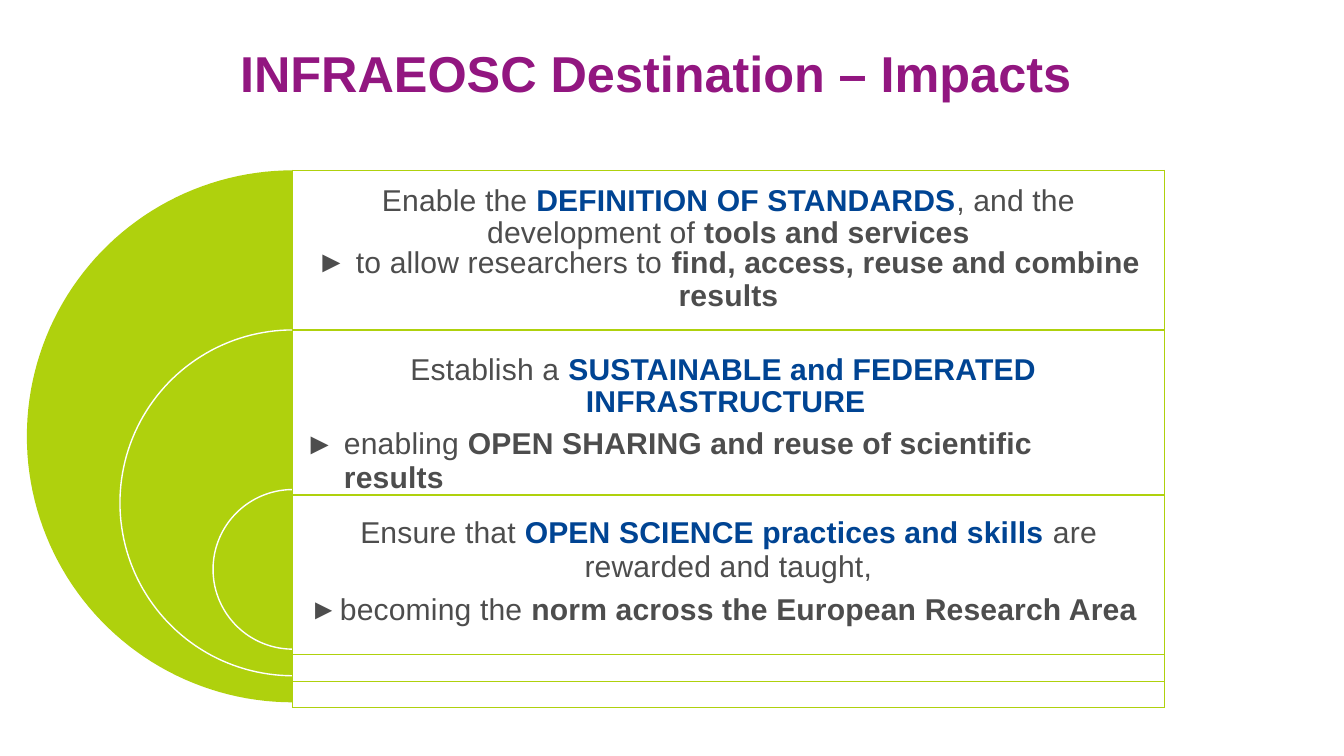
import math
from dataclasses import dataclass
from itertools import accumulate

from lxml import etree
from pptx import Presentation
from pptx.dml.color import RGBColor
from pptx.enum import text
from pptx.oxml import ns
from pptx.util import Pt


@dataclass(frozen=True)
class Theme:
    font: str = "Arial"
    title: str = "921680"
    green: str = "AFD10D"
    white: str = "FFFFFF"
    grey: str = "4D4D4D"
    blue: str = "004493"
    title_size: float = 36
    body_size: float = 21.5
    empty_size: float = 10
    body_tracking: float = 0.15
    line: float = 1


T = Theme()
CENTER, LEFT = text.PP_ALIGN.CENTER, text.PP_ALIGN.LEFT
STYLES = {
    "plain": (T.grey, False),
    "bold": (T.grey, True),
    "key": (T.blue, True),
}
NO_INDENTS = {"marL": 0, "marR": 0, "indent": 0}
ROW_HEIGHTS = [114, 114, 114, 19, 19]
IMPACTS = [
    (11.5, [
        ({"alignment": CENTER, "line_spacing": Pt(22.5)}, {"marL": 60, "marR": 60}, None,
         [("Enable the ", "plain"), ("DEFINITION OF STANDARDS", "key"),
          (", and the development of ", "plain"), ("tools and services", "bold")]),
        ({"alignment": CENTER, "line_spacing": Pt(21.4)}, {"marL": 28, "indent": -28}, 100,
         [("to allow researchers to ", "plain"),
          ("find, access, reuse and combine", "bold")]),
        ({"alignment": CENTER, "line_spacing": Pt(24.1)}, {}, None, [("results", "bold")]),
    ]),
    (18.2, [
        ({"alignment": LEFT, "line_spacing": Pt(22.5)}, {"marL": 209.5, "indent": -125.3}, None,
         [("Establish a ", "plain"),
          ("SUSTAINABLE and FEDERATED INFRASTRUCTURE", "key")]),
        ({"alignment": LEFT, "line_spacing": Pt(24.2), "space_before": Pt(6.3)},
         {"marL": 36.7, "marR": 40, "indent": -28}, 100,
         [("enabling ", "plain"),
          ("OPEN SHARING and reuse of scientific results", "bold")]),
    ]),
    (15.1, [
        ({"alignment": CENTER, "line_spacing": Pt(24.2)}, {}, None,
         [("Ensure that ", "plain"), ("OPEN SCIENCE practices and skills ", "key"),
          ("are", "plain")]),
        ({"alignment": CENTER, "line_spacing": Pt(24.2)}, {}, None,
         [("rewarded and taught,", "plain")]),
        ({"alignment": LEFT, "space_before": Pt(6.5)}, {"marL": 33.8, "indent": -21.6}, 95,
         [("becoming the ", "plain"),
          ("norm across the European Research Area", "bold")]),
    ]),
]


def apply(obj, values):
    for name, value in values.items():
        setattr(obj, name, value)


def add_xml(parent, tag, **attrs):
    return etree.SubElement(parent, ns.qn(tag), attrs)


def add_run(p, words, size, color, bold, tracking=0):
    r = p.add_run()
    r.text = words
    apply(r.font, {"name": T.font, "size": Pt(size), "bold": bold})
    r.font.color.rgb = RGBColor.from_string(color)
    r._r.get_or_add_rPr().set("spc", str(round(tracking * 100)))


def set_indents(p, indents):
    pPr = p._p.get_or_add_pPr()
    for name, value in (NO_INDENTS | indents).items():
        pPr.set(name, str(int(Pt(value))))
    return pPr


def add_bullet(pPr, size, tab):
    add_xml(pPr, "a:buSzPct", val=str(size * 1000))
    add_xml(pPr, "a:buFont", typeface=T.font)
    add_xml(pPr, "a:buChar", char="►")
    tabs = add_xml(pPr, "a:tabLst")
    add_xml(tabs, "a:tab", pos=str(int(Pt(tab))), algn="l")


def format_cell(cell, top):
    apply(cell, {"margin_left": 0, "margin_top": Pt(top),
                 "margin_right": 0, "margin_bottom": 0})
    tcPr = cell._tc.get_or_add_tcPr()
    for side in "LRTB":
        ln = add_xml(tcPr, f"a:ln{side}", w=str(int(Pt(T.line))))
        add_xml(add_xml(ln, "a:solidFill"), "a:srgbClr", val=T.green)
    cell.fill.background()


def fill_cell(cell, paragraphs):
    tf = cell.text_frame
    for i, (spacing, indents, bullet, runs) in enumerate(paragraphs):
        p = tf.add_paragraph() if i else tf.paragraphs[0]
        pPr = set_indents(p, indents)
        if bullet:
            add_bullet(pPr, bullet, indents["marL"])
        apply(p, spacing)
        for words, style in runs:
            add_run(p, words, T.body_size, *STYLES[style], T.body_tracking)


def add_title(s, x, y, w, h):
    sp = s.shapes.title
    apply(sp, {"left": Pt(x), "top": Pt(y), "width": Pt(w), "height": Pt(h)})
    tf = sp.text_frame
    apply(tf, {"margin_left": 0, "margin_top": Pt(1), "margin_right": 0, "margin_bottom": 0,
               "word_wrap": True, "vertical_anchor": text.MSO_ANCHOR.TOP,
               "auto_size": text.MSO_AUTO_SIZE.SHAPE_TO_FIT_TEXT})
    p = tf.paragraphs[0]
    set_indents(p, {"marL": 116})
    p.alignment = LEFT
    add_run(p, "INFRAEOSC Destination – Impacts", T.title_size, T.title, True)


def add_half_disc(group, right, top, bottom, fill, line):
    radius = (bottom - top) / 2
    points = [(Pt(right - radius * math.sin(a)), Pt(top + radius * (1 - math.cos(a))))
              for a in (math.pi * i / 90 for i in range(91))]
    builder = group.shapes.build_freeform(*points[0])
    builder.add_line_segments(points[1:], close=True)
    sp = builder.convert_to_shape()
    sp.shadow.inherit = False
    if fill:
        sp.fill.solid()
        sp.fill.fore_color.rgb = RGBColor.from_string(fill)
    else:
        sp.fill.background()
    if line:
        sp.line.color.rgb = RGBColor.from_string(line)
        sp.line.width = Pt(T.line)
    else:
        sp.line.fill.background()


def add_discs(s, right, top):
    edges = [top + e for e in accumulate(ROW_HEIGHTS, initial=0)]
    group = s.shapes.add_group_shape()
    looks = [(T.green, None), (None, T.white), (T.green, T.white)]
    for i, (fill, line) in enumerate(looks):
        add_half_disc(group, right, edges[i], edges[-1 - i], fill, line)


def add_impacts(s, x, y, w):
    frame = s.shapes.add_table(len(ROW_HEIGHTS), 1, Pt(x), Pt(y), Pt(w), Pt(sum(ROW_HEIGHTS)))
    table = frame.table
    apply(table, {"first_row": False, "horz_banding": False})
    for i, height in enumerate(ROW_HEIGHTS):
        table.rows[i].height = Pt(height)
        cell = table.cell(i, 0)
        if i < len(IMPACTS):
            top, paragraphs = IMPACTS[i]
            format_cell(cell, top)
            fill_cell(cell, paragraphs)
        else:
            format_cell(cell, 0)
            add_xml(cell.text_frame.paragraphs[0]._p, "a:endParaRPr",
                    sz=str(T.empty_size * 100))


def main():
    prs = Presentation()
    apply(prs, {"slide_width": Pt(960), "slide_height": Pt(540)})
    s = prs.slides.add_slide(prs.slide_layouts[5])
    add_discs(s, 209.2, 121.7)
    add_impacts(s, 209, 121.7, 622.8)
    add_title(s, 55.5, 28.8, 810.7, 41)
    prs.save("out.pptx")


if __name__ == "__main__":
    main()
